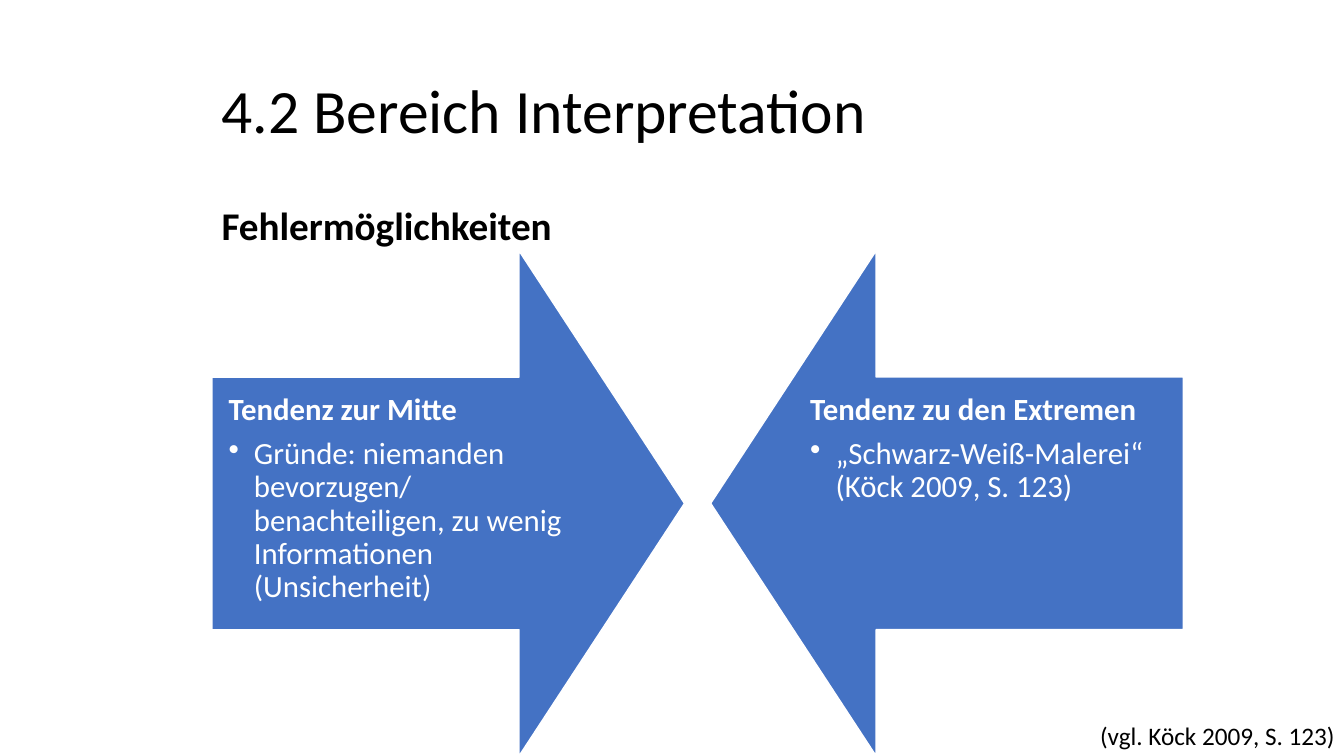
from lxml.etree import SubElement
from pptx import Presentation
from pptx.dml.color import RGBColor
from pptx.enum.shapes import MSO_SHAPE
from pptx.enum.text import MSO_ANCHOR, MSO_AUTO_SIZE, PP_ALIGN
from pptx.oxml.ns import qn
from pptx.util import Cm, Pt

BLACK, WHITE, BLUE = "000000", "FFFFFF", "4472C4"


def color(hex_string):
    return RGBColor.from_string(hex_string)


class SlideBuilder:
    font = "Calibri"
    line_spacing = 0.9

    def __init__(self, presentation):
        self.slide = presentation.slides.add_slide(presentation.slide_layouts[1])

    def add_text(self, paragraph, text, size, text_color=BLACK, bold=False):
        paragraph.line_spacing = self.line_spacing
        paragraph.space_before = Pt(0)
        run = paragraph.add_run()
        run.text = text
        run.font.name = self.font
        run.font.size = Pt(size)
        run.font.bold = bold
        run.font.color.rgb = color(text_color)

    def set_bullet(self, paragraph, character=None, indent=0):
        """Give the paragraph a hanging bullet, or none without a character."""
        properties = paragraph._p.get_or_add_pPr()
        properties.set("marL", str(Cm(indent)))
        properties.set("indent", str(-Cm(indent)))
        if character:
            SubElement(properties, qn("a:buChar"), char=character)
        else:
            SubElement(properties, qn("a:buNone"))

    def fill_placeholder(self, index, text, size, box, anchor, bold=False):
        shape = self.slide.placeholders[index]
        shape.left, shape.top, shape.width, shape.height = map(Cm, box)
        frame = shape.text_frame
        frame.auto_size = MSO_AUTO_SIZE.NONE
        frame.vertical_anchor = anchor
        paragraph = frame.paragraphs[0]
        self.set_bullet(paragraph)
        paragraph.alignment = PP_ALIGN.LEFT
        self.add_text(paragraph, text, size, bold=bold)

    def add_text_frame(self, box, inset=None):
        frame = self.slide.shapes.add_textbox(*map(Cm, box)).text_frame
        frame.word_wrap = True
        if inset is not None:
            frame.margin_left = frame.margin_right = Cm(inset)
            frame.margin_top = frame.margin_bottom = Cm(inset)
        return frame

    def add_citation(self, text, box):
        paragraph = self.add_text_frame(box).paragraphs[0]
        paragraph.alignment = PP_ALIGN.RIGHT
        self.add_text(paragraph, text, 18)
        paragraph.line_spacing = 1.0

    def add_arrow(self, left, rotation):
        arrow = self.slide.shapes.add_shape(
            MSO_SHAPE.DOWN_ARROW, Cm(left), Cm(6.73), Cm(12.73), Cm(11.91))
        arrow.rotation = rotation
        arrow.adjustments[0] = 0.5
        arrow.adjustments[1] = 0.35
        arrow.shadow.inherit = False
        arrow.fill.solid()
        arrow.fill.fore_color.rgb = color(BLUE)
        arrow.line.color.rgb = color(WHITE)
        arrow.line.width = Pt(1)

    def add_tendency(self, left, heading, detail):
        frame = self.add_text_frame((left, 9.5, 9.83, 6.35), inset=0.43)
        heading_paragraph = frame.paragraphs[0]
        self.add_text(heading_paragraph, heading, 22, WHITE, bold=True)
        heading_paragraph.space_after = Pt(7.7)
        detail_paragraph = frame.add_paragraph()
        self.set_bullet(detail_paragraph, "•", 0.64)
        self.add_text(detail_paragraph, detail, 22, WHITE)


def main():
    presentation = Presentation()
    presentation.slide_width, presentation.slide_height = Cm(33.87), Cm(19.05)
    builder = SlideBuilder(presentation)
    builder.fill_placeholder(0, "4.2 Bereich Interpretation", 44,
                             (5.33, 1.02, 26.21, 3.68), MSO_ANCHOR.MIDDLE)
    builder.fill_placeholder(1, "Fehlermöglichkeiten", 28,
                             (5.33, 5.08, 26.21, 12.09), MSO_ANCHOR.TOP, bold=True)
    builder.add_citation("(vgl. Köck 2009, S. 123)", (24.92, 18.03, 8.97, 1.02))

    tendencies = [
        (4.93, 270, 5.33, "Tendenz zur Mitte",
         "Gründe: niemanden bevorzugen/ benachteiligen, "
         "zu wenig Informationen (Unsicherheit)"),
        (17.5, 90, 19.99, "Tendenz zu den Extremen",
         "„Schwarz-Weiß-Malerei“ (Köck 2009, S. 123)"),
    ]
    for arrow_left, rotation, text_left, heading, detail in tendencies:
        builder.add_arrow(arrow_left, rotation)
        builder.add_tendency(text_left, heading, detail)
    presentation.save("out.pptx")


if __name__ == "__main__":
    main()
